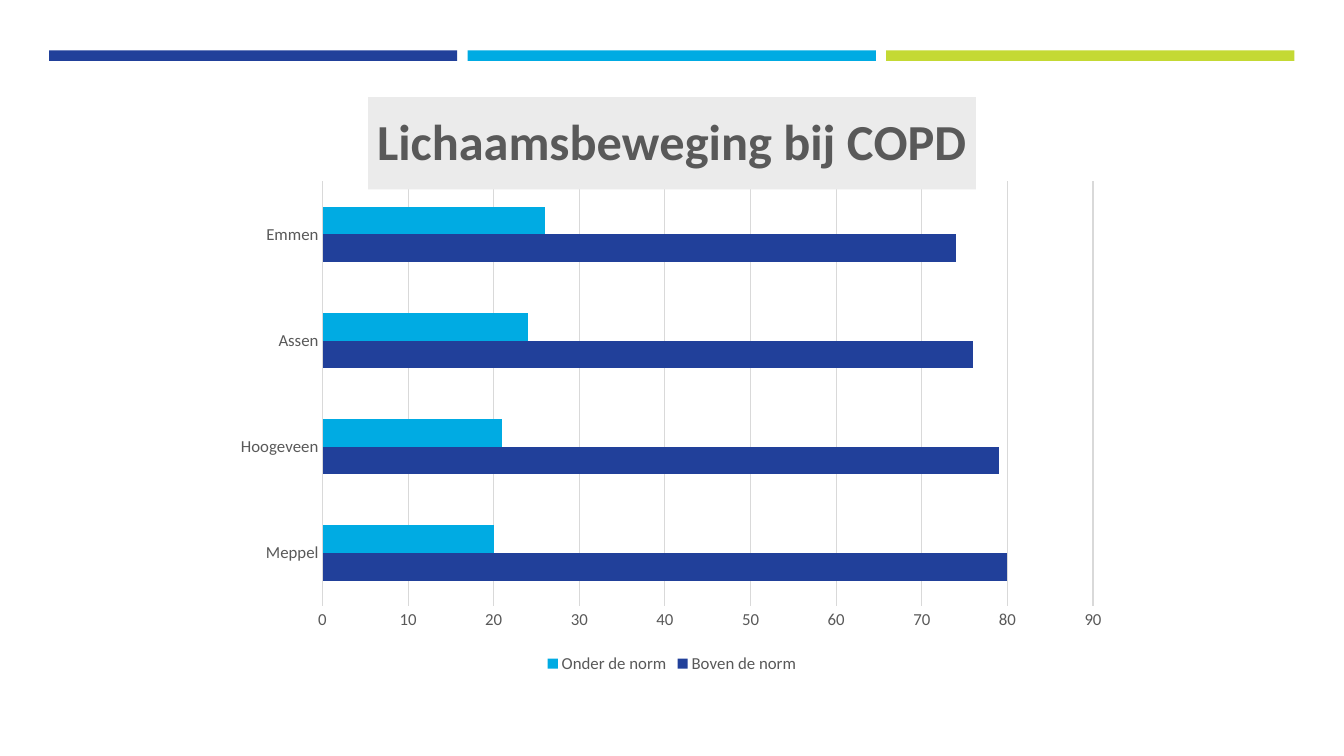
from lxml import etree
from pptx import Presentation
from pptx.chart.data import CategoryChartData
from pptx.dml.color import RGBColor
from pptx.enum.chart import XL_CHART_TYPE, XL_LEGEND_POSITION, XL_TICK_MARK
from pptx.enum.shapes import MSO_SHAPE
from pptx.oxml.ns import qn
from pptx.util import Pt

BAR_CLUSTERED = XL_CHART_TYPE.BAR_CLUSTERED
BOTTOM = XL_LEGEND_POSITION.BOTTOM
NO_TICK = XL_TICK_MARK.NONE
RECTANGLE = MSO_SHAPE.RECTANGLE

BLUE = RGBColor(0x21, 0x40, 0x9A)
CYAN = RGBColor(0x00, 0xAB, 0xE3)
LIME = RGBColor(0xC4, 0xD9, 0x34)
TEXT_GREY = RGBColor(0x59, 0x59, 0x59)
LINE_GREY = RGBColor(0xD9, 0xD9, 0xD9)
TITLE_GREY = RGBColor(0xEB, 0xEB, 0xEB)
FONT = "Calibri"

TOWNS = ["Meppel", "Hoogeveen", "Assen", "Emmen"]
SERIES = [
    ("Boven de norm", [80, 79, 76, 74], BLUE),
    ("Onder de norm", [20, 21, 24, 26], CYAN),
]


def style_font(font, size, bold=False):
    font.name = FONT
    font.size = Pt(size)
    font.bold = bold
    font.color.rgb = TEXT_GREY


def style_line(line):
    line.color.rgb = LINE_GREY
    line.width = Pt(0.75)


def add_band(s, left, color):
    band = s.shapes.add_shape(RECTANGLE, Pt(left), Pt(36), Pt(291.6), Pt(7.5))
    band.shadow.inherit = False
    band.fill.solid()
    band.fill.fore_color.rgb = color
    band.line.fill.background()


def set_title(chart, text):
    chart.has_title = True
    title = chart.chart_title
    title.include_in_layout = False
    title.format.fill.solid()
    title.format.fill.fore_color.rgb = TITLE_GREY
    p = title.text_frame.paragraphs[0]
    p.text = text
    style_font(p.runs[0].font, 36, True)


def set_plot_layout(chart, x, y, w, h):
    """Place the inner plot area, in fractions of the chart size."""
    plot_area = chart.plots[0]._element.getparent()
    for old in plot_area.findall(qn("c:layout")):
        plot_area.remove(old)
    layout = etree.Element(qn("c:layout"))
    manual = etree.SubElement(layout, qn("c:manualLayout"))
    values = [("layoutTarget", "inner"), ("xMode", "edge"), ("yMode", "edge"),
              ("x", x), ("y", y), ("w", w), ("h", h)]
    for tag, value in values:
        etree.SubElement(manual, qn(f"c:{tag}")).set("val", str(value))
    plot_area.insert(0, layout)


def style_axes(chart):
    for axis in (chart.category_axis, chart.value_axis):
        axis.major_tick_mark = NO_TICK
        axis.minor_tick_mark = NO_TICK
        style_font(axis.tick_labels.font, 12)
    style_line(chart.category_axis.format.line)
    values = chart.value_axis
    values.minimum_scale, values.maximum_scale, values.major_unit = 0, 90, 10
    values.format.line.fill.background()
    values.has_major_gridlines = True
    style_line(values.major_gridlines.format.line)


def add_bar_chart(s):
    data = CategoryChartData()
    data.categories = TOWNS
    for name, values, _ in SERIES:
        data.add_series(name, values)
    chart = s.shapes.add_chart(
        BAR_CLUSTERED, Pt(160), Pt(57), Pt(640), Pt(427), data).chart
    style_font(chart.font, 10)
    set_title(chart, "Lichaamsbeweging bij COPD")
    set_plot_layout(chart, 0.11, 0.17, 0.86, 0.71)
    style_axes(chart)
    plot = chart.plots[0]
    plot.gap_width = 182
    plot.overlap = 0
    plot.vary_by_categories = False
    for series, (_, _, color) in zip(plot.series, SERIES):
        series.format.fill.solid()
        series.format.fill.fore_color.rgb = color
    chart.has_legend = True
    chart.legend.position = BOTTOM
    chart.legend.include_in_layout = False
    style_font(chart.legend.font, 12)


def main():
    prs = Presentation()
    prs.slide_width, prs.slide_height = Pt(960), Pt(540)
    s = prs.slides.add_slide(prs.slide_layouts[6])
    for i, color in enumerate((BLUE, CYAN, LIME)):
        add_band(s, 35 + i * 299, color)
    add_bar_chart(s)
    prs.save("out.pptx")


if __name__ == "__main__":
    main()
